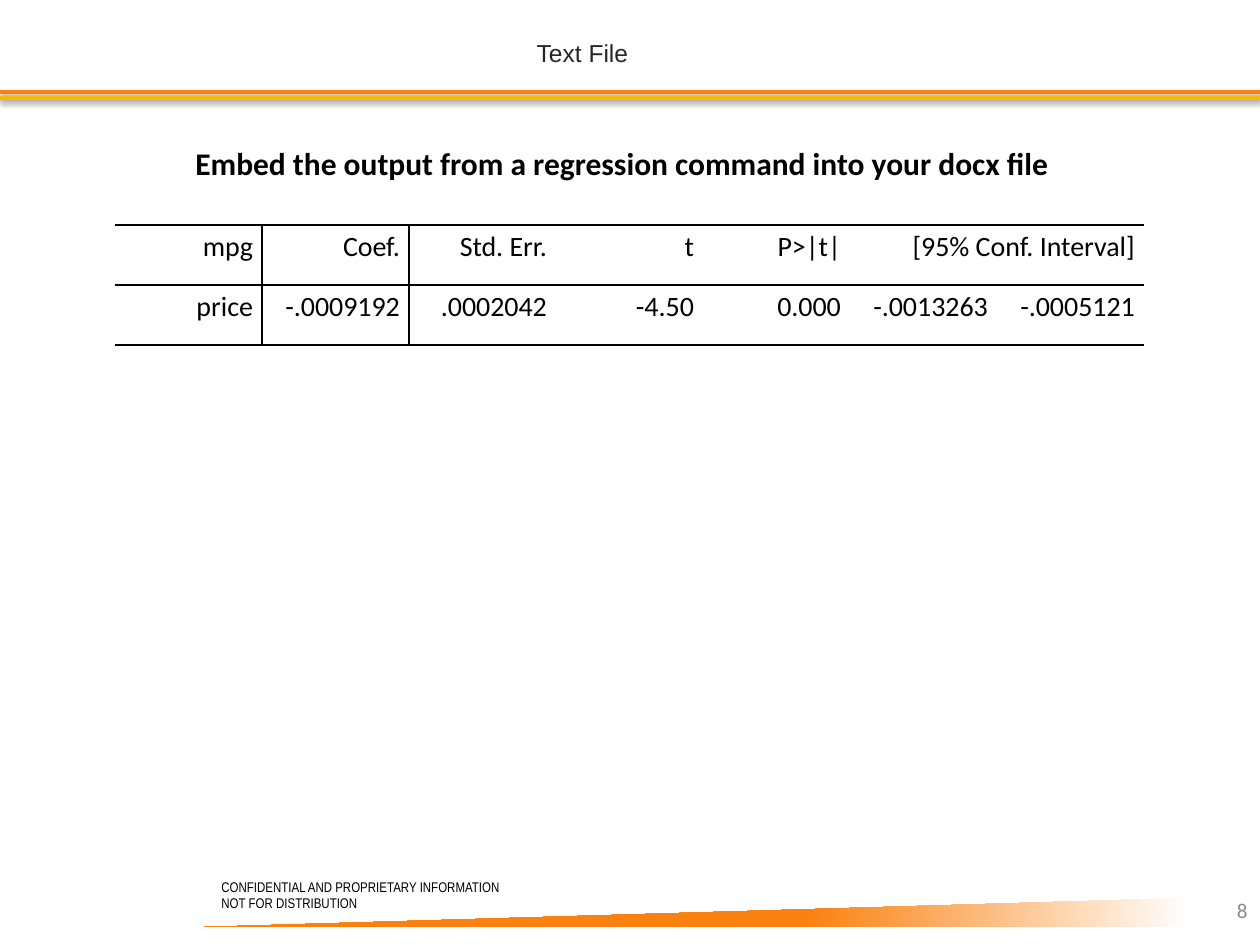
from lxml.etree import SubElement
from pptx import Presentation
from pptx.dml.color import RGBColor
from pptx.enum.shapes import MSO_CONNECTOR, MSO_SHAPE
from pptx.enum.text import MSO_ANCHOR, MSO_AUTO_SIZE, PP_ALIGN
from pptx.oxml import parse_xml
from pptx.oxml.ns import nsdecls, qn
from pptx.util import Inches, Pt

SCALE = Inches(1) // 126
WIDTH, HEIGHT = 1260, 945
BLACK, ORANGE, YELLOW = "000000", "FA810F", "FCB800"
NO_GRID_STYLE = "{2D5ABB26-0587-4C30-8999-92F81FD0307C}"
ROWS = [
    ["mpg", "Coef.", "Std. Err.", "t", "P>|t|", "[95% Conf. Interval]", ""],
    ["price", "-.0009192", ".0002042", "-4.50", "0.000", "-.0013263", "-.0005121"],
]


def px(*values):
    return [v * SCALE for v in values]


def rgb(color):
    return RGBColor.from_string(color)


def add_run(p, text, size, font, color=BLACK, bold=False):
    r = p.add_run()
    r.text = text
    r.font.size = Pt(size)
    r.font.name = font
    r.font.bold = bold
    r.font.color.rgb = rgb(color)


def fill_frame(tf, lines, size, font, color=BLACK, bold=False,
               align=PP_ALIGN.LEFT, anchor=MSO_ANCHOR.TOP, wrap=True):
    tf.word_wrap = wrap
    tf.auto_size = MSO_AUTO_SIZE.NONE
    tf.vertical_anchor = anchor
    for i, line in enumerate(lines):
        p = tf.add_paragraph() if i else tf.paragraphs[0]
        p.alignment = align
        add_run(p, line, size, font, color, bold)


def add_text(slide, box, lines, size, font, **style):
    tb = slide.shapes.add_textbox(*px(*box))
    fill_frame(tb.text_frame, lines, size, font, **style)


def set_title(slide, box, text):
    title = slide.shapes.title
    title.left, title.top, title.width, title.height = px(*box)
    fill_frame(title.text_frame, [text], 14, "Arial", "262626",
               align=PP_ALIGN.CENTER)


def add_rule(slide, y, color):
    """Full-width line with a soft shadow below it."""
    line = slide.shapes.add_connector(MSO_CONNECTOR.STRAIGHT, *px(0, y, WIDTH, y))
    line.line.color.rgb = rgb(color)
    line.line.width = Pt(2)
    line._element.spPr.append(parse_xml(
        f'<a:effectLst {nsdecls("a")}><a:outerShdw blurRad="{Pt(3.1)}" '
        f'dist="{Pt(1.6)}" dir="5400000" rotWithShape="0">'
        f'<a:srgbClr val="{BLACK}"><a:alpha val="38000"/></a:srgbClr>'
        '</a:outerShdw></a:effectLst>'))


def add_wedge(slide, box):
    sp = slide.shapes.add_shape(MSO_SHAPE.RIGHT_TRIANGLE, *px(*box))
    sp.shadow.inherit = False
    sp._element.spPr.get_or_add_xfrm().set("flipH", "1")
    sp.line.fill.background()
    sp.fill.gradient()
    sp.fill.gradient_angle = 0
    stops = [(0, "FFFFFF"), (0.39, ORANGE)]
    for stop, (position, color) in zip(sp.fill.gradient_stops, stops):
        stop.position = position
        stop.color.rgb = rgb(color)


def set_borders(cell, sides):
    tcPr = cell._tc.get_or_add_tcPr()
    for side in sides:
        ln = SubElement(tcPr, qn(f"a:ln{side}"), w=str(Pt(1)))
        fill = SubElement(ln, qn("a:solidFill"))
        SubElement(fill, qn("a:srgbClr"), val=BLACK)


def add_regression_table(slide, left, top, col_width, row_height):
    n_rows, n_cols = len(ROWS), len(ROWS[0])
    frame = slide.shapes.add_table(
        n_rows, n_cols, *px(left, top, col_width * n_cols, row_height * n_rows))
    table = frame.table
    table.first_row = table.horz_banding = False
    table._tbl.tblPr.find(qn("a:tableStyleId")).text = NO_GRID_STYLE
    table.cell(0, n_cols - 2).merge(table.cell(0, n_cols - 1))
    for i, row in enumerate(ROWS):
        for j, text in enumerate(row):
            cell = table.cell(i, j)
            set_borders(cell, {0: "RTB", 1: "LTB"}.get(j, "TB"))
            cell.fill.background()
            cell.margin_left = cell.margin_right = px(9)[0]
            cell.margin_top = cell.margin_bottom = 0
            if text:
                p = cell.text_frame.paragraphs[0]
                p.alignment = PP_ALIGN.RIGHT
                p.line_spacing = 1.15
                add_run(p, text, 16, "Calibri")


def main():
    prs = Presentation()
    prs.slide_width, prs.slide_height = px(WIDTH, HEIGHT)
    slide = prs.slides.add_slide(prs.slide_layouts[5])

    add_wedge(slide, (204, 898, 987, 29))
    add_rule(slide, 92, ORANGE)
    add_rule(slide, 98, YELLOW)
    add_text(slide, (209, 872, 368, 47),
             ["CONFIDENTIAL AND PROPRIETARY INFORMATION", "NOT FOR DISTRIBUTION"],
             8, "Arial Narrow")
    set_title(slide, (0, 32, 1165, 53), "Text File")
    add_text(slide, (966, 885, 294, 50), ["8"], 12, "Calibri", color="898989",
             align=PP_ALIGN.RIGHT, anchor=MSO_ANCHOR.MIDDLE)
    add_regression_table(slide, 115, 225, 147, 60)
    add_text(slide, (183, 138, 895, 50),
             ["Embed the output from a regression command into your docx file"],
             18, "Calibri", bold=True, anchor=MSO_ANCHOR.MIDDLE, wrap=False)

    prs.save("out.pptx")


if __name__ == "__main__":
    main()
